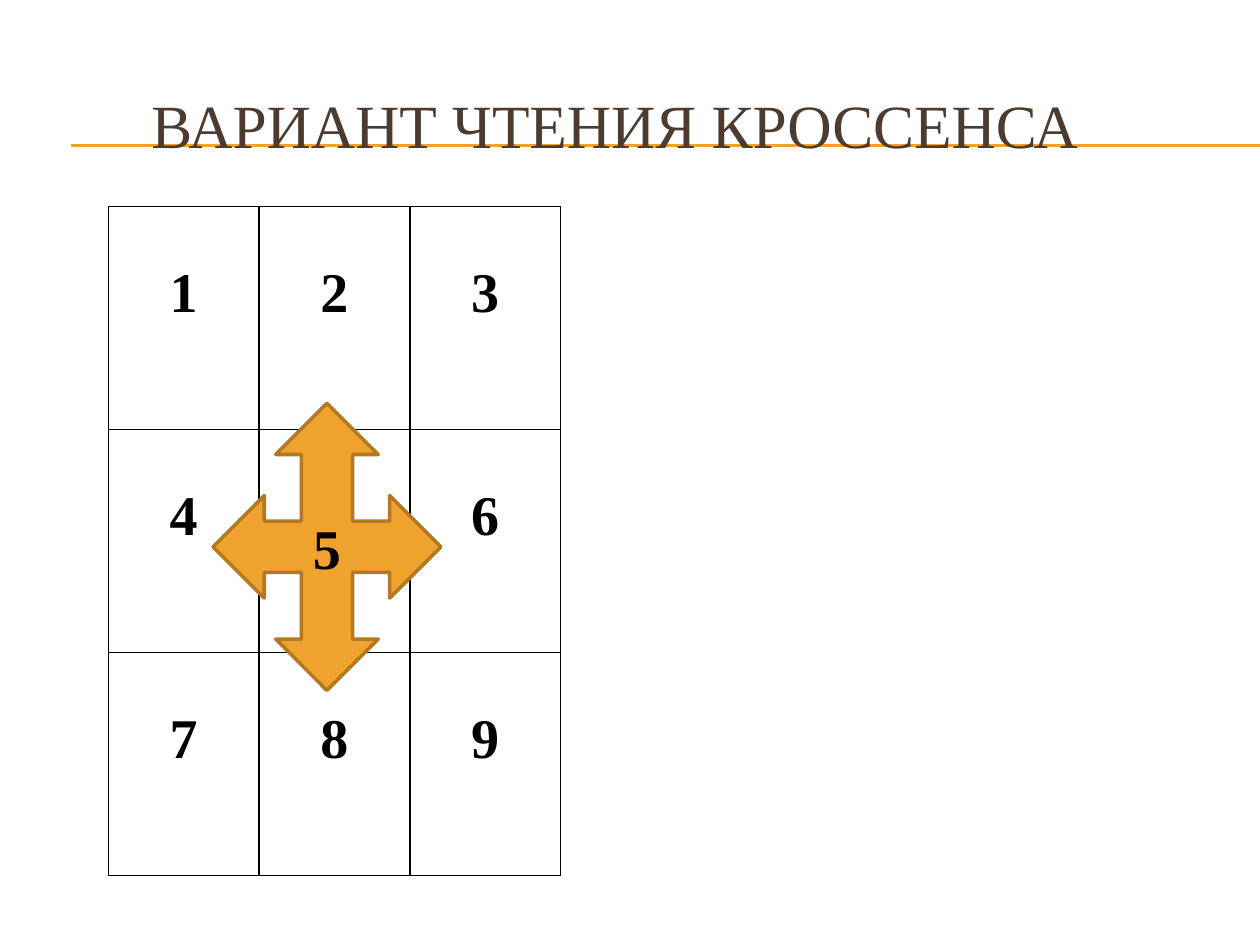
from dataclasses import dataclass

from lxml.etree import SubElement
from pptx import Presentation
from pptx.dml.color import RGBColor
from pptx.enum.shapes import MSO_CONNECTOR, MSO_SHAPE
from pptx.enum.text import MSO_ANCHOR, PP_ALIGN
from pptx.oxml.ns import qn
from pptx.slide import Slide
from pptx.table import _Cell
from pptx.text.text import TextFrame
from pptx.util import Inches, Pt

ORANGE = "F0A22E"
DARK_ORANGE = "B27822"
BROWN = "4E3B30"
BLACK = "000000"
GRID_SIZE = 3


@dataclass(frozen=True)
class TextStyle:
    size: float
    color: str
    bold: bool = False
    font: str = "Times New Roman"


TITLE = TextStyle(35.1, BROWN)
NUMBER = TextStyle(32, BLACK, bold=True)


def rgb(color: str) -> RGBColor:
    return RGBColor.from_string(color)


def write(frame: TextFrame, text: str, style: TextStyle) -> None:
    frame.text = text
    para = frame.paragraphs[0]
    para.alignment = PP_ALIGN.CENTER
    font = para.runs[0].font
    font.name = style.font
    font.size = Pt(style.size)
    font.bold = style.bold
    font.color.rgb = rgb(style.color)


def draw_rule(page: Slide, top: float) -> None:
    rule = page.shapes.add_connector(
        MSO_CONNECTOR.STRAIGHT, Inches(0.56), Inches(top), Inches(10), Inches(top)
    )
    rule.line.color.rgb = rgb(ORANGE)
    rule.line.width = Pt(0.75)
    SubElement(rule._element.spPr, qn("a:effectLst"))


def outline_cell(cell: _Cell, color: str, width: float) -> None:
    properties = cell._tc.get_or_add_tcPr()
    for position, side in enumerate(("a:lnL", "a:lnR", "a:lnT", "a:lnB")):
        border = SubElement(properties, qn(side), w=str(Pt(width)))
        fill = SubElement(border, qn("a:solidFill"))
        SubElement(fill, qn("a:srgbClr"), val=color)
        properties.insert(position, border)


def draw_grid(page: Slide) -> None:
    table = page.shapes.add_table(
        GRID_SIZE, GRID_SIZE, Inches(0.86), Inches(1.64), Inches(3.59), Inches(5.31)
    ).table
    table.first_row = False
    table.horz_banding = False
    for number, cell in enumerate(table.iter_cells(), start=1):
        cell.fill.background()
        cell.margin_left = cell.margin_right = Inches(0.07)
        cell.margin_top = Inches(0.44)
        cell.margin_bottom = Inches(0)
        write(cell.text_frame, str(number), NUMBER)
        outline_cell(cell, BLACK, 1)


def draw_arrow(page: Slide) -> None:
    arrow = page.shapes.add_shape(
        MSO_SHAPE.QUAD_ARROW, Inches(1.69), Inches(3.2), Inches(1.81), Inches(2.28)
    )
    arrow.shadow.inherit = False
    arrow.fill.solid()
    arrow.fill.fore_color.rgb = rgb(ORANGE)
    arrow.line.color.rgb = rgb(DARK_ORANGE)
    arrow.line.width = Pt(2)
    arrow.text_frame.vertical_anchor = MSO_ANCHOR.MIDDLE
    write(arrow.text_frame, "5", NUMBER)


def draw_title(page: Slide) -> None:
    box = page.shapes.add_textbox(Inches(0.43), Inches(0.52), Inches(8.9), Inches(0.92))
    box.text_frame.word_wrap = True
    box.text_frame.vertical_anchor = MSO_ANCHOR.MIDDLE
    write(box.text_frame, "ВАРИАНТ ЧТЕНИЯ КРОССЕНСА", TITLE)


def main() -> None:
    """Build the slide showing how to read a three-by-three crossens."""
    deck = Presentation()
    deck.slide_width = Inches(10)
    deck.slide_height = Inches(7.5)
    page = deck.slides.add_slide(deck.slide_layouts[6])
    for top in (1.15, 1.16):
        draw_rule(page, top)
    draw_grid(page)
    draw_arrow(page)
    draw_title(page)
    deck.save("out.pptx")


if __name__ == "__main__":
    main()
